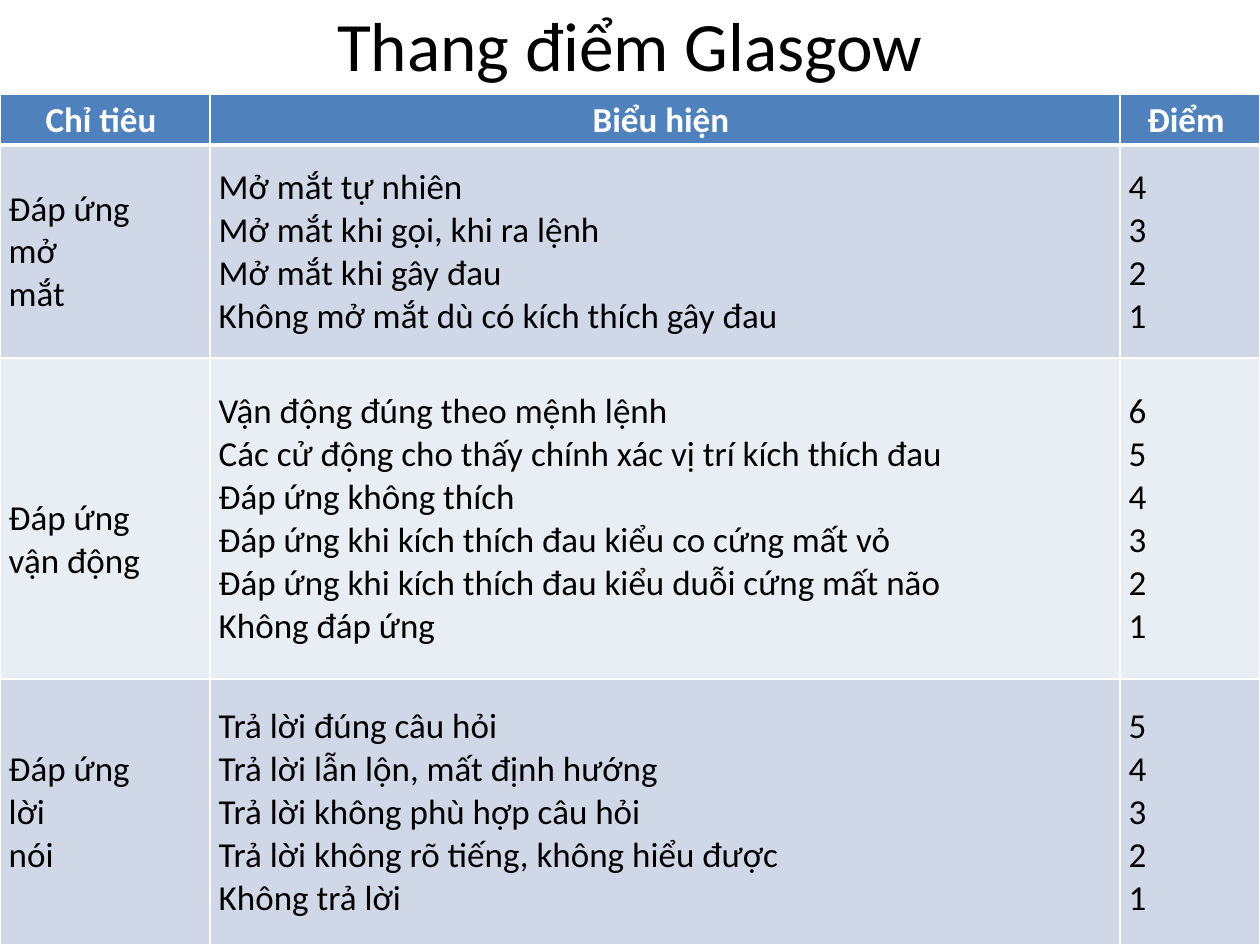
from lxml.etree import SubElement as Sub
from pptx import Presentation
from pptx.dml.color import RGBColor as Rgb
from pptx.enum.text import MSO_ANCHOR as Anchor, PP_ALIGN as Align
from pptx.oxml.ns import qn
from pptx.util import Pt

HUES = {"head": "4F81BD", "odd": "D0D8E8", "even": "E9EDF4",
        "white": "FFFFFF", "black": "000000"}
FONT = "Calibri"
COLS = [120, 520, 80]
ROWS = [28.8, 121.7, 183.5, 152]
HEAD = ["Chỉ tiêu", "Biểu hiện", "Điểm"]
GROUPS = [
    (["Đáp ứng", "mở", "mắt"],
     ["Mở mắt tự nhiên", "Mở mắt khi gọi, khi ra lệnh",
      "Mở mắt khi gây đau", "Không mở mắt dù có kích thích gây đau"]),
    (["Đáp ứng", "vận động"],
     ["Vận động đúng theo mệnh lệnh",
      "Các cử động cho thấy chính xác vị trí kích thích đau",
      "Đáp ứng không thích",
      "Đáp ứng khi kích thích đau kiểu co cứng mất vỏ",
      "Đáp ứng khi kích thích đau kiểu duỗi cứng mất não",
      "Không đáp ứng"]),
    (["Đáp ứng", "lời", "nói"],
     ["Trả lời đúng câu hỏi", "Trả lời lẫn lộn, mất định hướng",
      "Trả lời không phù hợp câu hỏi",
      "Trả lời không rõ tiếng, không hiểu được", "Không trả lời"]),
]


def style(frame, size, hue, align, bold=False):
    for para in frame.paragraphs:
        para.alignment = align
        for run in para.runs:
            font = run.font
            font.name, font.size, font.bold = FONT, Pt(size), bold
            font.color.rgb = Rgb.from_string(HUES[hue])


def add_title(slide, text):
    title = slide.shapes.title
    title.left, title.top = Pt(36), Pt(0)
    title.width, title.height = Pt(648), Pt(50.4)
    frame = title.text_frame
    frame.text = text
    frame.vertical_anchor = Anchor.MIDDLE
    style(frame, 39.6, "black", Align.CENTER)


def add_edges(cell, top, base):
    props = cell._tc.get_or_add_tcPr()
    for side, width in (("L", 1), ("R", 1), ("T", top), ("B", base)):
        line = Sub(props, qn(f"a:ln{side}"), w=str(Pt(width)))
        fill = Sub(line, qn("a:solidFill"))
        Sub(fill, qn("a:srgbClr"), val=HUES["white"])


def fill_cell(cell, lines, hue, top=1, base=1):
    add_edges(cell, top, base)
    cell.fill.solid()
    cell.fill.fore_color.rgb = Rgb.from_string(HUES[hue])
    cell.vertical_anchor = Anchor.MIDDLE
    cell.margin_left = cell.margin_right = Pt(5)
    cell.margin_top, cell.margin_bottom = Pt(0.7), Pt(0)
    cell.text_frame.text = "\n".join(lines)


def add_scale(slide):
    shape = slide.shapes.add_table(len(ROWS), len(COLS), Pt(0), Pt(54),
                                   Pt(sum(COLS)), Pt(sum(ROWS)))
    table = shape.table
    for col, width in zip(table.columns, COLS):
        col.width = Pt(width)
    for row, height in zip(table.rows, ROWS):
        row.height = Pt(height)
    for c, text in enumerate(HEAD):
        cell = table.cell(0, c)
        fill_cell(cell, [text], "head", base=3)
        cell.margin_right = Pt(9.5)
        style(cell.text_frame, 20, "white", Align.CENTER, True)
    for r, (name, signs) in enumerate(GROUPS, 1):
        marks = [str(n) for n in range(len(signs), 0, -1)]
        for c, lines in enumerate((name, signs, marks)):
            cell = table.cell(r, c)
            fill_cell(cell, lines, "odd" if r % 2 else "even",
                      top=3 if r == 1 else 1)
            style(cell.text_frame, 20, "black", Align.JUSTIFY)
    table.cell(2, 0).margin_top = Pt(25)


def main():
    deck = Presentation()
    deck.slide_width, deck.slide_height = Pt(720), Pt(540)
    slide = deck.slides.add_slide(deck.slide_layouts[5])
    add_title(slide, "Thang điểm Glasgow")
    add_scale(slide)
    deck.save("out.pptx")


if __name__ == "__main__":
    main()
